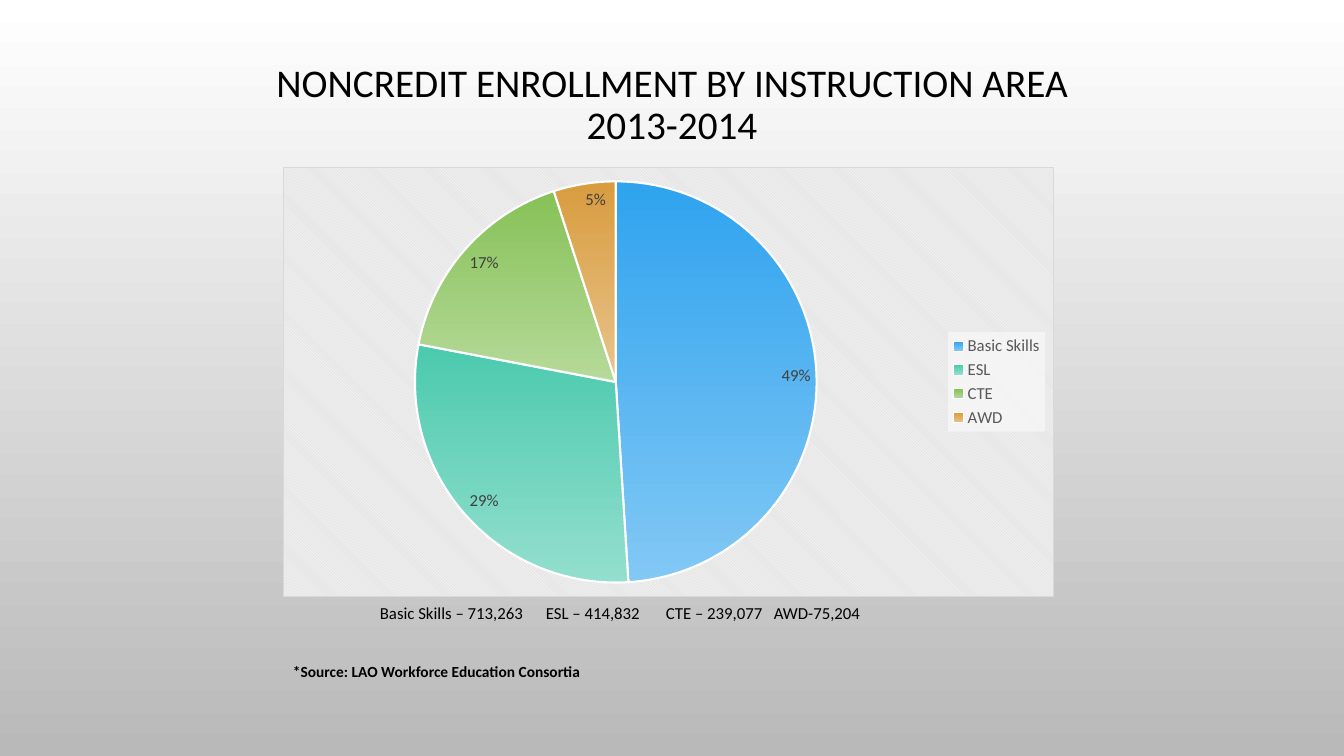
from lxml import etree
from pptx import Presentation
from pptx.chart.data import CategoryChartData
from pptx.dml.color import RGBColor
from pptx.enum.chart import XL_CHART_TYPE, XL_LABEL_POSITION, XL_LEGEND_POSITION
from pptx.enum.text import MSO_ANCHOR, MSO_AUTO_SIZE, PP_ALIGN
from pptx.oxml import parse_xml
from pptx.oxml.ns import nsdecls, qn
from pptx.util import Pt

WHITE = RGBColor(0xFF, 0xFF, 0xFF)
BLACK = RGBColor(0x00, 0x00, 0x00)
SILVER = RGBColor(0xB9, 0xB9, 0xB9)
LEGEND_GRAY = RGBColor(0x59, 0x59, 0x59)
LABEL_GRAY = RGBColor(0x40, 0x40, 0x40)
SLICES = [
    ("Basic Skills", 49, RGBColor(0x2F, 0xA3, 0xEE), RGBColor(0x82, 0xC8, 0xF5)),
    ("ESL", 29, RGBColor(0x4B, 0xCA, 0xAD), RGBColor(0x93, 0xDF, 0xCE)),
    ("CTE", 17, RGBColor(0x86, 0xC1, 0x57), RGBColor(0xB6, 0xDA, 0x9A)),
    ("AWD", 5, RGBColor(0xD9, 0x9C, 0x3F), RGBColor(0xE8, 0xC4, 0x8C)),
]
TOTALS = {
    "Basic Skills – 713,263": 87,
    "ESL – 414,832": 253,
    "CTE – 239,077": 373,
    "AWD-75,204": 481,
}
CHART_FILL = (
    '<a:pattFill prst="dkDnDiag"><a:fgClr><a:srgbClr val="FFFFFF"/></a:fgClr>'
    '<a:bgClr><a:srgbClr val="E6E6E6"/></a:bgClr></a:pattFill>'
    '<a:ln w="9525"><a:solidFill><a:srgbClr val="D9D9D9"/></a:solidFill></a:ln>'
)
LEGEND_FILL = (
    '<a:solidFill><a:srgbClr val="FFFFFF"><a:alpha val="50000"/></a:srgbClr></a:solidFill>'
)


def px(n):
    return round(n * 12192000 / 1344)


def set_font(font, size, color=BLACK, bold=False):
    font.name = "Calibri"
    font.size = Pt(size)
    font.color.rgb = color
    font.bold = bold


def write(p, text, **fmt):
    r = p.add_run()
    r.text = text
    set_font(r.font, **fmt)


def shade(fill, top, bottom):
    fill.gradient()
    fill.gradient_angle = 270
    for stop, color in zip(fill.gradient_stops, (top, bottom)):
        stop.color.rgb = color


def chart_props(content):
    return parse_xml(f'<c:spPr {nsdecls("c", "a")}>{content}</c:spPr>')


class Deck:
    """Holds the presentation style and the current slide."""

    def __init__(self):
        self.prs = Presentation()
        self.prs.slide_width, self.prs.slide_height = px(1344), px(756)
        self.slide = self.prs.slides.add_slide(self.prs.slide_layouts[5])
        shade(self.slide.background.fill, WHITE, SILVER)

    def title(self, text, x, y, w, h):
        sp = self.slide.shapes.title
        sp.left, sp.top, sp.width, sp.height = map(px, (x, y, w, h))
        tf = sp.text_frame
        tf.word_wrap = True
        tf.auto_size = MSO_AUTO_SIZE.NONE
        tf.vertical_anchor = MSO_ANCHOR.MIDDLE
        p = tf.paragraphs[0]
        p.alignment = PP_ALIGN.CENTER
        p.line_spacing = 0.9
        write(p, text, size=28)

    def pie(self, slices, x, y, w, h):
        data = CategoryChartData(number_format="#,##0")
        data.categories = [name for name, *_ in slices]
        data.add_series("Series 1", [value for _, value, *_ in slices])
        chart = self.slide.shapes.add_chart(
            XL_CHART_TYPE.PIE, px(x), px(y), px(w), px(h), data
        ).chart
        set_font(chart.font, 10)
        chart.has_title = False
        chart.element.find(qn("c:chart")).addnext(chart_props(CHART_FILL))

        chart.has_legend = True
        legend = chart.legend
        legend.position = XL_LEGEND_POSITION.RIGHT
        legend.include_in_layout = False
        set_font(legend.font, 12, LEGEND_GRAY)
        overlay = chart.element.find(".//" + qn("c:legend") + "/" + qn("c:overlay"))
        overlay.addnext(chart_props(LEGEND_FILL))

        plot = chart.plots[0]
        plot.vary_by_categories = True
        for i, (_, _, top, bottom) in enumerate(slices):
            fmt = plot.series[0].points[i].format
            shade(fmt.fill, top, bottom)
            fmt.line.color.rgb = WHITE
            fmt.line.width = Pt(1.5)
        plot.has_data_labels = True
        labels = plot.data_labels
        labels.show_value = False
        labels.show_percentage = True
        labels.number_format = "0%"
        labels.number_format_is_linked = False
        labels.position = XL_LABEL_POSITION.INSIDE_END
        set_font(labels.font, 12, LABEL_GRAY)

    def caption(self, totals, source, x, y, w, h):
        tf = self.slide.shapes.add_textbox(px(x), px(y), px(w), px(h)).text_frame
        tf.word_wrap = True
        tf.auto_size = MSO_AUTO_SIZE.SHAPE_TO_FIT_TEXT
        p = tf.paragraphs[0]
        tabs = etree.SubElement(p._p.get_or_add_pPr(), qn("a:tabLst"))
        for stop in totals.values():
            etree.SubElement(tabs, qn("a:tab"), pos=str(px(stop)), algn="l")
        write(p, "".join("\t" + text for text in totals), size=12)
        p = tf.add_paragraph()
        p.space_before = Pt(28)
        write(p, source, size=11, bold=True)


def main():
    deck = Deck()
    deck.title("NONCREDIT ENROLLMENT BY INSTRUCTION AREA 2013-2014", 229, 26, 886, 159)
    deck.pie(SLICES, 283, 167, 771, 430)
    deck.caption(TOTALS, "*Source: LAO Workforce Education Consortia", 283, 598, 771, 89)
    deck.prs.save("out.pptx")


if __name__ == "__main__":
    main()
